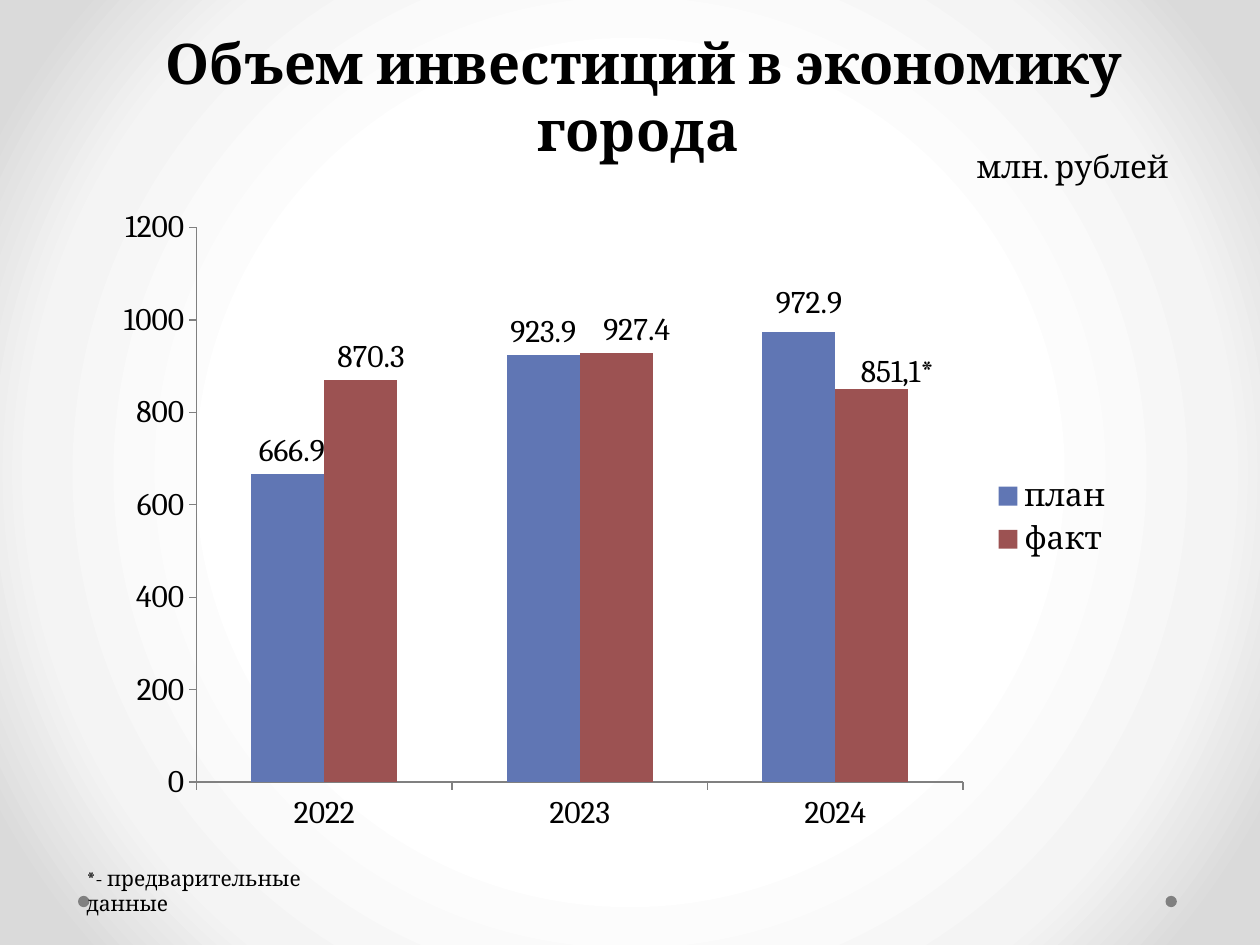
import pptx
import pptx.chart.data
import pptx.dml.color
import pptx.enum.chart
import pptx.enum.shapes
import pptx.enum.text
import pptx.oxml
import pptx.oxml.ns
import pptx.util
from dataclasses import dataclass

Pt = pptx.util.Pt
Align = pptx.enum.text.PP_ALIGN


@dataclass
class Theme:
    font: str = "Cambria"
    text: str = "000000"
    gray: str = "808080"
    plan: str = "6076B4"
    fact: str = "9C5252"
    backdrop: tuple = ((50, "FFFFFF"), (76, "F4F4F4"), (92, "DADADA"))
    title_size: int = 32
    body_size: int = 18
    note_size: int = 12


theme = Theme()


def rgb(value):
    return pptx.dml.color.RGBColor.from_string(value)


def style_font(font, size, bold=False):
    font.name = theme.font
    font.size = Pt(size)
    font.bold = bold
    font.color.rgb = rgb(theme.text)


presentation = pptx.Presentation()
presentation.slide_width, presentation.slide_height = Pt(720), Pt(540)
slide = presentation.slides.add_slide(presentation.slide_layouts[5])

# Radial background
slide.background.fill.gradient()
gradient = slide.background._cSld.xpath(".//a:gradFill")[0]
for child in list(gradient):
    gradient.remove(child)
stops = "".join(
    f'<a:gs pos="{position * 1000}"><a:srgbClr val="{color}"/></a:gs>'
    for position, color in theme.backdrop
)
namespace = pptx.oxml.ns.nsdecls("a")
gradient.append(pptx.oxml.parse_xml(f"<a:gsLst {namespace}>{stops}</a:gsLst>"))
gradient.append(pptx.oxml.parse_xml(
    f'<a:path {namespace} path="circle">'
    '<a:fillToRect l="50000" t="50000" r="50000" b="50000"/></a:path>'
))

# Footer dots
for left in (666, 44.6):
    dot = slide.shapes.add_shape(
        pptx.enum.shapes.MSO_SHAPE.OVAL, Pt(left), Pt(511.9), Pt(6.5), Pt(6.5))
    dot.shadow.inherit = False
    dot.fill.solid()
    dot.fill.fore_color.rgb = rgb(theme.gray)
    dot.line.fill.background()

# Title
title = slide.shapes.title
title.left, title.top, title.width, title.height = Pt(28), Pt(21), Pt(680.4), Pt(67.7)
frame = title.text_frame
frame.text = "Объем инвестиций в экономику города "
frame.auto_size = pptx.enum.text.MSO_AUTO_SIZE.NONE
frame.vertical_anchor = pptx.enum.text.MSO_ANCHOR.MIDDLE
frame.paragraphs[0].alignment = Align.CENTER
style_font(frame.paragraphs[0].runs[0].font, theme.title_size, bold=True)

# Chart
chart_data = pptx.chart.data.CategoryChartData()
chart_data.categories = ["2022", "2023", "2024"]
chart_data.add_series("план", (666.9, 923.9, 972.9))
chart_data.add_series("факт", (870.3, 927.4, 851.1))
chart = slide.shapes.add_chart(
    pptx.enum.chart.XL_CHART_TYPE.COLUMN_CLUSTERED,
    Pt(59.8), Pt(111.6), Pt(584), Pt(368.6), chart_data).chart
style_font(chart.font, theme.body_size)
chart.has_title = False
chart.has_legend = True
chart.legend.position = pptx.enum.chart.XL_LEGEND_POSITION.RIGHT
chart.legend.include_in_layout = False

for axis in (chart.category_axis, chart.value_axis):
    axis.has_major_gridlines = False
    axis.major_tick_mark = pptx.enum.chart.XL_TICK_MARK.OUTSIDE
    axis.format.line.color.rgb = rgb(theme.gray)
    axis.format.line.width = Pt(0.75)
chart.value_axis.minimum_scale = 0
chart.value_axis.maximum_scale = 1200
chart.value_axis.major_unit = 200


def manual_layout(settings):
    """Return a c:layout element from (tag, value) pairs."""
    items = "".join(f'<c:{tag} val="{value}"/>' for tag, value in settings)
    return pptx.oxml.parse_xml(
        f'<c:layout {pptx.oxml.ns.nsdecls("c")}>'
        f"<c:manualLayout>{items}</c:manualLayout></c:layout>")


plot_area = chart._chartSpace.xpath(".//c:plotArea")[0]
for layout in plot_area.xpath("./c:layout"):
    plot_area.remove(layout)
plot_area.insert(0, manual_layout([
    ("layoutTarget", "inner"), ("xMode", "edge"), ("yMode", "edge"),
    ("x", 0.09), ("y", 0.05), ("w", 0.75), ("h", 0.86)]))

plot = chart.plots[0]
plot.gap_width = 150
plot.overlap = 0
plot.vary_by_categories = False
outside_end = pptx.enum.chart.XL_LABEL_POSITION.OUTSIDE_END
label_shifts = (
    {0: (0.004, 0), 2: (0.01, -0.01)},
    {0: (0.01, 0), 1: (0.02, 0), 2: (0.025, 0.01)},
)
for series, color, shifts in zip(plot.series, (theme.plan, theme.fact), label_shifts):
    series.format.fill.solid()
    series.format.fill.fore_color.rgb = rgb(color)
    series.data_labels.show_value = True
    series.data_labels.position = outside_end
    style_font(series.data_labels.font, theme.body_size)
    for index, (x, y) in shifts.items():
        label = series.points[index].data_label
        if series.name == "факт" and index == 2:
            label.text_frame.text = "851,1*"
            style_font(label.text_frame.paragraphs[0].runs[0].font, theme.body_size)
        else:
            style_font(label.font, theme.body_size)
        label.position = outside_end
        element = series._element.xpath(f"./c:dLbls/c:dLbl[c:idx/@val='{index}']")[0]
        element.insert(1, manual_layout([("x", x), ("y", y)]))

# Unit and footnote
captions = (
    ("млн. рублей ", 535.7, 80.6, 29, theme.body_size, Align.CENTER),
    ("*- предварительные данные", 42.5, 491, 21.6, theme.note_size, Align.LEFT),
)
for text, left, top, height, size, alignment in captions:
    frame = slide.shapes.add_textbox(Pt(left), Pt(top), Pt(158.4), Pt(height)).text_frame
    frame.word_wrap = True
    frame.text = text
    frame.paragraphs[0].alignment = alignment
    style_font(frame.paragraphs[0].runs[0].font, size)

presentation.save("out.pptx")
